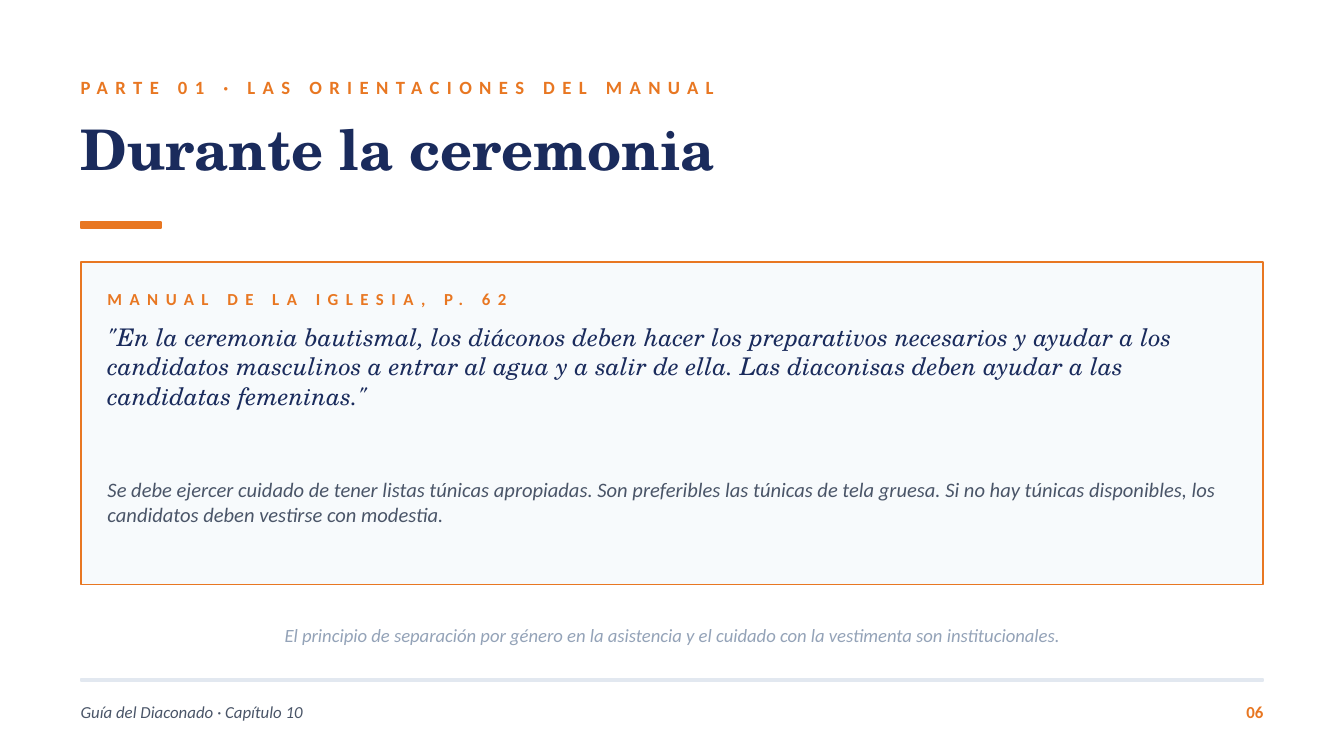
from pptx import Presentation
from pptx.dml.color import RGBColor
from pptx.enum.shapes import MSO_SHAPE
from pptx.enum.text import MSO_ANCHOR, PP_ALIGN
from pptx.util import Inches, Pt

RECTANGLE = MSO_SHAPE.RECTANGLE
TOP, MIDDLE = MSO_ANCHOR.TOP, MSO_ANCHOR.MIDDLE
LEFT, CENTER, RIGHT = PP_ALIGN.LEFT, PP_ALIGN.CENTER, PP_ALIGN.RIGHT

ORANGE = RGBColor(0xE8, 0x77, 0x22)
NAVY = RGBColor(0x1A, 0x2B, 0x5C)
SLATE = RGBColor(0x4A, 0x55, 0x68)
MUTED = RGBColor(0x94, 0xA3, 0xB8)
RULE_GRAY = RGBColor(0xE2, 0xE8, 0xF0)
PANEL_FILL = RGBColor(0xF7, 0xFA, 0xFC)

SANS = "Calibri"
SERIF = "TeX Gyre Schola"

SLIDE_WIDTH = 10
MARGIN = 0.6
CONTENT_WIDTH = 8.8
PANEL_LEFT = MARGIN + 0.2
PANEL_TEXT_WIDTH = CONTENT_WIDTH - 0.4

presentation = Presentation()
presentation.slide_width = Inches(SLIDE_WIDTH)
presentation.slide_height = Inches(SLIDE_WIDTH * 9 / 16)
slide = presentation.slides.add_slide(presentation.slide_layouts[6])


def add_rectangle(left, top, width, height, fill, line):
    shape = slide.shapes.add_shape(
        RECTANGLE, Inches(left), Inches(top), Inches(width), Inches(height))
    shape.shadow.inherit = False
    shape.fill.solid()
    shape.fill.fore_color.rgb = fill
    shape.line.color.rgb = line
    shape.line.width = Pt(1)


def add_text(text, left, top, width, height, size, color, font=SANS, bold=False,
             italic=False, anchor=MIDDLE, align=LEFT, spacing=0):
    """Add a one-run text box without insets; spacing is letter spacing in points."""
    box = slide.shapes.add_textbox(
        Inches(left), Inches(top), Inches(width), Inches(height))
    frame = box.text_frame
    frame.word_wrap = True
    frame.vertical_anchor = anchor
    frame.margin_left = frame.margin_top = frame.margin_right = frame.margin_bottom = 0
    paragraph = frame.paragraphs[0]
    paragraph.alignment = align
    run = paragraph.add_run()
    run.text = text
    run.font.name = font
    run.font.size = Pt(size)
    run.font.bold = bold
    run.font.italic = italic
    run.font.color.rgb = color
    if spacing:
        run.font._element.set("spc", str(spacing * 100))


# Heading
add_text("PARTE 01 · LAS ORIENTACIONES DEL MANUAL", MARGIN, 0.5, 7, 0.3,
         10, ORANGE, bold=True, spacing=4)
add_text("Durante la ceremonia", MARGIN, 0.85, 9, 0.7,
         30, NAVY, font=SERIF, bold=True, anchor=TOP)
add_rectangle(MARGIN, 1.65, 0.6, 0.05, ORANGE, ORANGE)

# Quotation panel
add_rectangle(MARGIN, 1.95, CONTENT_WIDTH, 2.4, PANEL_FILL, ORANGE)
add_text("MANUAL DE LA IGLESIA, P. 62", PANEL_LEFT, 2.1, 6, 0.25,
         9, ORANGE, bold=True, spacing=4)
add_text('"En la ceremonia bautismal, los diáconos deben hacer los preparativos '
         "necesarios y ayudar a los candidatos masculinos a entrar al agua y a salir "
         'de ella. Las diaconisas deben ayudar a las candidatas femeninas."',
         PANEL_LEFT, 2.4, PANEL_TEXT_WIDTH, 1.1,
         13, NAVY, font=SERIF, italic=True, anchor=TOP)
add_text("Se debe ejercer cuidado de tener listas túnicas apropiadas. Son preferibles "
         "las túnicas de tela gruesa. Si no hay túnicas disponibles, los candidatos "
         "deben vestirse con modestia.",
         PANEL_LEFT, 3.55, PANEL_TEXT_WIDTH, 0.75,
         11, SLATE, italic=True, anchor=TOP)

# Closing remark and footer
add_text("El principio de separación por género en la asistencia y el cuidado con la "
         "vestimenta son institucionales.",
         MARGIN, 4.55, CONTENT_WIDTH, 0.35, 10, MUTED, italic=True, align=CENTER)
add_rectangle(MARGIN, 5.05, CONTENT_WIDTH, 0.02, RULE_GRAY, RULE_GRAY)
add_text("Guía del Diaconado · Capítulo 10", MARGIN, 5.15, 6, 0.3,
         9, SLATE, italic=True)
add_text("06", MARGIN + CONTENT_WIDTH - 0.5, 5.15, 0.5, 0.3,
         9, ORANGE, bold=True, align=RIGHT)

presentation.save("out.pptx")
